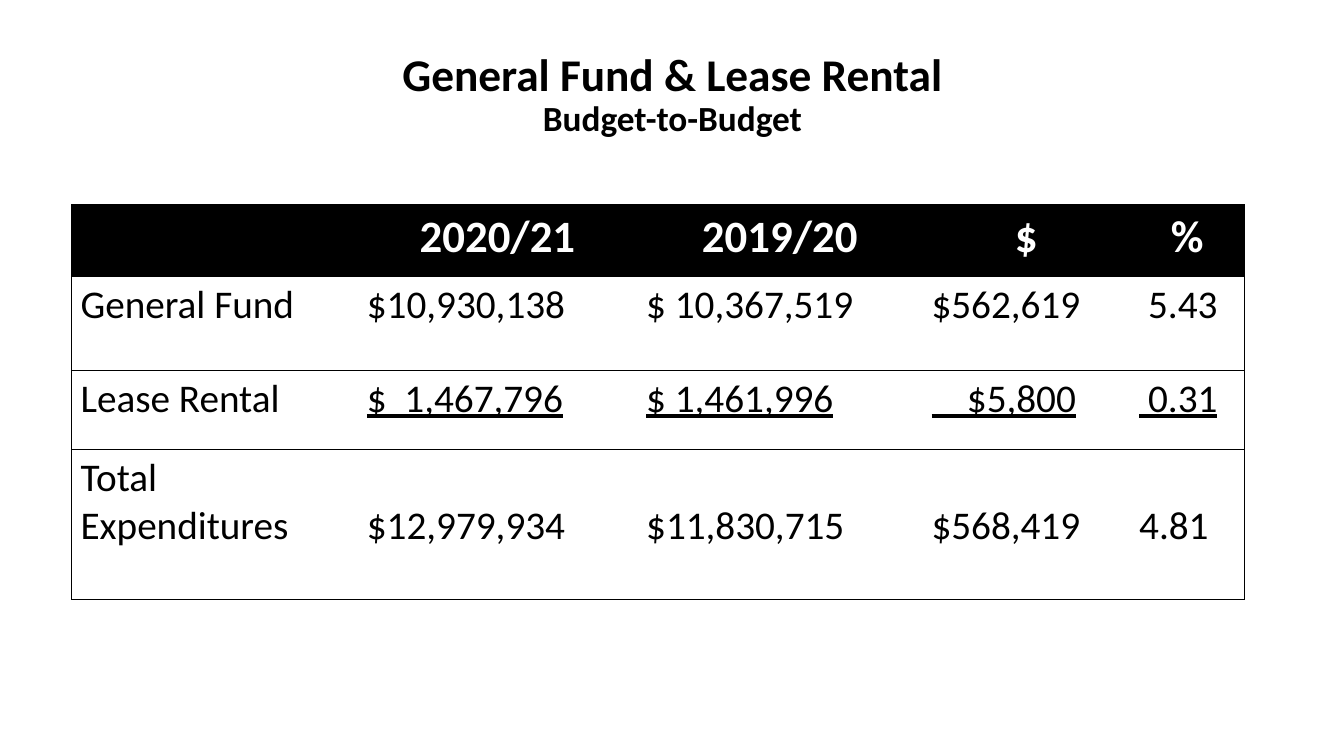
from lxml import etree
from pptx import Presentation
from pptx import util as u
from pptx.dml.color import RGBColor
from pptx.enum import text
from pptx.oxml import ns

BLACK, WHITE = "000000", "FFFFFF"
COLUMNS = [2.84, 2.77, 2.83, 2.06, 1.13]
HEIGHTS = [0.71, 0.93, 0.79, 1.49]
BUDGET = [
    ["", "2020/21", "2019/20", "$", "%"],
    ["General Fund", "$10,930,138", "$ 10,367,519", "$562,619", " 5.43"],
    ["Lease Rental", "$  1,467,796", "$ 1,461,996", "    $5,800", " 0.31"],
    ["Total Expenditures", "$12,979,934", "$11,830,715", "$568,419", "4.81"],
]


def rgb(value):
    """Return the colour for a hex string."""
    return RGBColor.from_string(value)


def format_paragraph(p, size, color, bold, align):
    """Set the font and alignment of a paragraph."""
    p.alignment = align
    p.font.name = "Calibri"
    p.font.size = u.Pt(size)
    p.font.bold = bold
    p.font.color.rgb = rgb(color)


def set_borders(cell, visible):
    """Draw thin black lines on the visible sides and clear the others."""
    tcPr = cell._tc.get_or_add_tcPr()
    for side in "LRTB":
        ln = etree.SubElement(tcPr, ns.qn(f"a:ln{side}"), w=str(u.Pt(0.5)))
        if side in visible:
            fill = etree.SubElement(ln, ns.qn("a:solidFill"))
            etree.SubElement(fill, ns.qn("a:srgbClr"), val=BLACK)
        else:
            etree.SubElement(ln, ns.qn("a:noFill"))


def add_title(s, left, top, width, height):
    """Fill the title placeholder with a heading and a subheading."""
    sp = s.shapes.title
    sp.left, sp.top, sp.width, sp.height = map(u.Inches, (left, top, width, height))
    tf = sp.text_frame
    tf.auto_size = text.MSO_AUTO_SIZE.NONE
    tf.vertical_anchor = text.MSO_ANCHOR.MIDDLE
    tf.margin_bottom = u.Inches(0.4)
    tf.text = "General Fund & Lease Rental\nBudget-to-Budget"
    for p, size in zip(tf.paragraphs, (32.4, 25.2)):
        format_paragraph(p, size, BLACK, True, text.PP_ALIGN.CENTER)
        p.line_spacing = 0.9


def add_budget_table(s, left, top):
    """Place the budget comparison table at the given corner."""
    box = map(u.Inches, (left, top, sum(COLUMNS), sum(HEIGHTS)))
    table = s.shapes.add_table(len(HEIGHTS), len(COLUMNS), *box).table
    for column, width in zip(table.columns, COLUMNS):
        column.width = u.Inches(width)
    last = len(BUDGET) - 1
    for i, values in enumerate(BUDGET):
        table.rows[i].height = u.Inches(HEIGHTS[i])
        header = i == 0
        for j, value in enumerate(values):
            cell = table.cell(i, j)
            sides = "TB" + ("L" if j == 0 else "") + ("R" if j == len(values) - 1 else "")
            set_borders(cell, sides)
            cell.fill.solid()
            cell.fill.fore_color.rgb = rgb(BLACK if header else WHITE)
            cell.margin_left = cell.margin_right = u.Inches(0.09)
            cell.margin_top = u.Inches(0.52 if i == last and j else 0.05)
            cell.margin_bottom = u.Inches(0.05)
            cell.text = value
            p = cell.text_frame.paragraphs[0]
            if header:
                format_paragraph(p, 32, WHITE, True, text.PP_ALIGN.CENTER)
            else:
                format_paragraph(p, 28, BLACK, False, text.PP_ALIGN.LEFT)
            if i == last - 1 and j:
                p.runs[0].font.underline = True


def main():
    """Build and save the budget slide."""
    prs = Presentation()
    prs.slide_width, prs.slide_height = u.Inches(13.33), u.Inches(7.5)
    s = prs.slides.add_slide(prs.slide_layouts[5])
    add_title(s, 0.92, 0.4, 11.5, 1.45)
    add_budget_table(s, 0.71, 2.03)
    prs.save("out.pptx")


if __name__ == "__main__":
    main()
